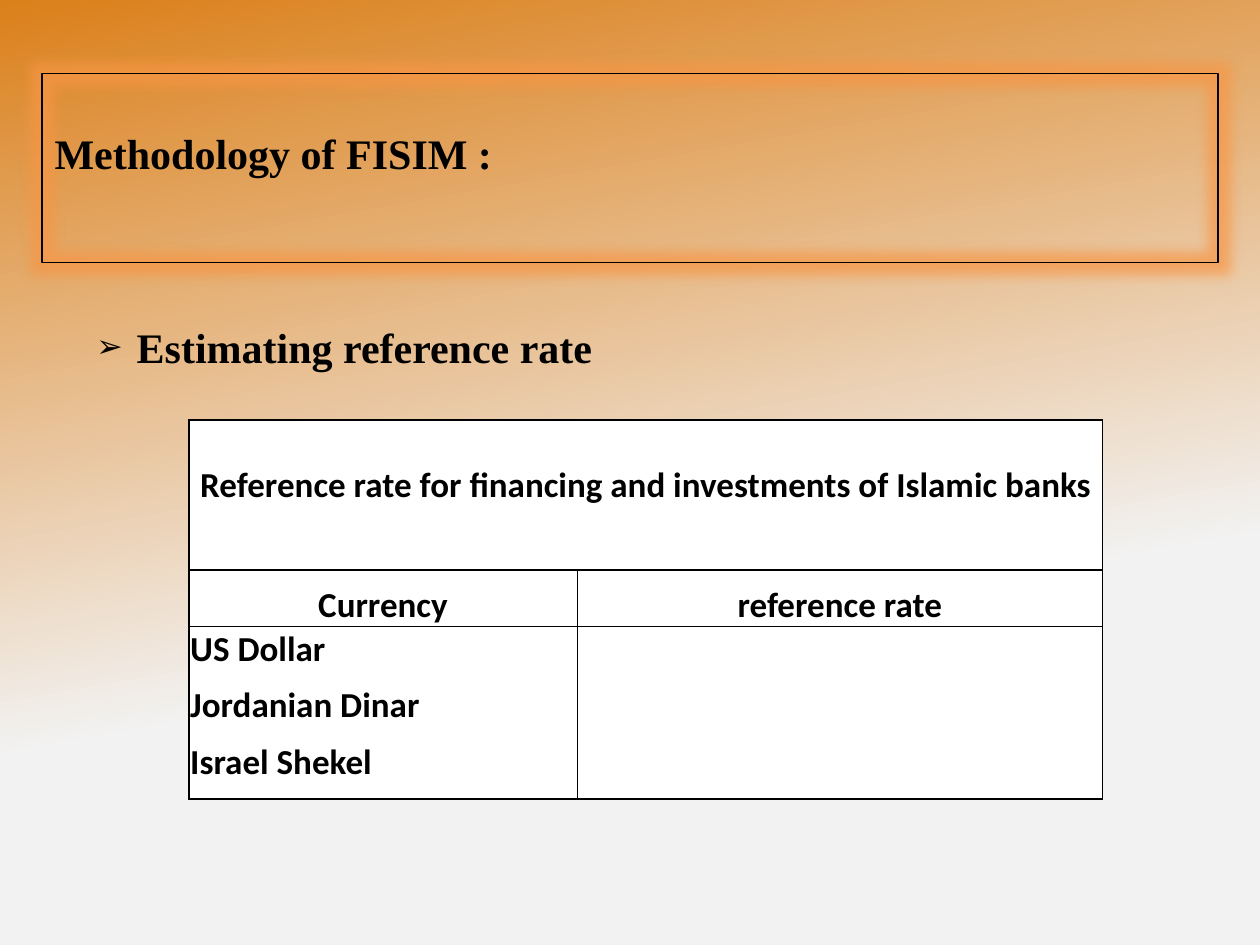
from lxml import etree
from pptx import Presentation, util as u
from pptx.dml.color import RGBColor
from pptx.enum import text
from pptx.oxml import parse_xml
from pptx.oxml.ns import qn

COLORS = {"ink": "000000", "paper": "FFFFFF", "orange": "DB801B",
          "mist": "F2F2F2", "glow": "F79646"}
DRAWING = "http://schemas.openxmlformats.org/drawingml/2006/main"
CURRENCIES = ["US Dollar", "Jordanian Dinar", "Israel Shekel"]


class SlideBuilder:
    """Hold the style and the slide, placing elements on a 60 by 45 grid."""

    columns, rows = 60, 45
    serif, sans = "Times New Roman", "Calibri"

    def __init__(self, presentation):
        self.width = presentation.slide_width
        self.height = presentation.slide_height
        self.slide = presentation.slides.add_slide(presentation.slide_layouts[5])

    def box(self, left, top, width, height):
        across, down = self.width / self.columns, self.height / self.rows
        return [u.Emu(round(value)) for value in
                (left * across, top * down, width * across, height * down)]

    def color(self, name):
        return RGBColor.from_string(COLORS[name])

    def add_words(self, paragraph, words, size, font):
        run = paragraph.add_run()
        run.text = words
        run.font.size, run.font.name, run.font.bold = u.Pt(size), font, True
        run.font.color.rgb = self.color("ink")

    def background(self, start, end, reach, angle):
        fill = self.slide.background.fill
        fill.gradient()
        fill.gradient_angle = 360 - angle
        for stop, name, position in zip(fill.gradient_stops, (start, end), (0, reach)):
            stop.color.rgb = self.color(name)
            stop.position = position

    def title(self, words, box):
        shape = self.slide.shapes.title
        shape.left, shape.top, shape.width, shape.height = self.box(*box)
        shape.line.color.rgb = self.color("ink")
        shape.line.width = u.Pt(1)
        shape._element.spPr.append(parse_xml(
            f'<a:effectLst xmlns:a="{DRAWING}"><a:glow rad="{u.Pt(14)}">'
            f'<a:srgbClr val="{COLORS["glow"]}"><a:alpha val="70000"/></a:srgbClr>'
            '</a:glow></a:effectLst>'))
        frame = shape.text_frame
        frame.auto_size = text.MSO_AUTO_SIZE.NONE
        frame.vertical_anchor = text.MSO_ANCHOR.MIDDLE
        frame.margin_bottom = u.Inches(0.29)
        paragraph = frame.paragraphs[0]
        paragraph.alignment = text.PP_ALIGN.LEFT
        self.add_words(paragraph, words, 24, self.serif)

    def bullet(self, words, box):
        frame = self.slide.shapes.add_textbox(*self.box(*box)).text_frame
        frame.word_wrap = False
        paragraph = frame.paragraphs[0]
        self.add_words(paragraph, words, 24, self.serif)
        properties = paragraph._p.get_or_add_pPr()
        indent = u.Inches(0.32)
        properties.set("marL", str(indent))
        properties.set("indent", str(-indent))
        etree.SubElement(properties, qn("a:buSzPct"), val="75000")
        etree.SubElement(properties, qn("a:buFont"), typeface=self.sans)
        etree.SubElement(properties, qn("a:buChar"), char="➢")

    def borders(self, cell, weights):
        properties = cell._tc.get_or_add_tcPr()
        for index, (side, weight) in enumerate(zip("LRTB", weights)):
            paint = (f'<a:solidFill><a:srgbClr val="{COLORS["ink"]}"/></a:solidFill>'
                     if weight else '<a:noFill/>')
            properties.insert(index, parse_xml(
                f'<a:ln{side} xmlns:a="{DRAWING}" w="{u.Pt(weight)}">{paint}</a:ln{side}>'))

    def cell(self, cell, words, centered, anchor, top_margin):
        cell.fill.solid()
        cell.fill.fore_color.rgb = self.color("paper")
        cell.margin_left = cell.margin_right = u.Inches(0.01)
        cell.margin_top, cell.margin_bottom = u.Inches(top_margin), 0
        cell.vertical_anchor = anchor
        if words:
            paragraph = cell.text_frame.paragraphs[0]
            paragraph.alignment = text.PP_ALIGN.CENTER if centered else text.PP_ALIGN.LEFT
            self.add_words(paragraph, words, 20, self.sans)

    def table(self, content, box, widths, heights):
        table = self.slide.shapes.add_table(
            len(heights), len(widths), *self.box(*box)).table
        table.first_row = table.horz_banding = False
        for column, width in zip(table.columns, widths):
            column.width = u.Inches(width)
        for row, height in zip(table.rows, heights):
            row.height = u.Inches(height)
        table.cell(0, 0).merge(table.cell(0, len(widths) - 1))
        levels = [1, 1, 0.5] + [0] * (len(heights) - 3) + [1]
        for r, values in enumerate(content):
            uprights = [1, 0.5 if r else 1, 1]
            anchor = text.MSO_ANCHOR.BOTTOM if r == 1 else text.MSO_ANCHOR.TOP
            for c, words in enumerate(values):
                cell = table.cell(r, c)
                self.cell(cell, words, r < 2, anchor, 0.01 if r else 0.35)
                self.borders(cell, uprights[c:c + 2] + levels[r:r + 2])


def main():
    presentation = Presentation()
    presentation.slide_width, presentation.slide_height = u.Inches(10), u.Inches(7.5)
    builder = SlideBuilder(presentation)
    builder.background("orange", "mist", 0.65, 80)
    builder.title("Methodology of FISIM :", (2, 3.5, 56, 9))
    content = [["Reference rate for financing and investments of Islamic banks", ""],
               ["Currency", "reference rate"]]
    content += [[currency, ""] for currency in CURRENCIES]
    builder.table(content, (9, 20, 43.5, 18), [3.08, 4.17], [1.19] + [0.45] * 3 + [0.47])
    builder.bullet("Estimating reference rate", (4, 15, 25, 3))
    presentation.save("out.pptx")


if __name__ == "__main__":
    main()
